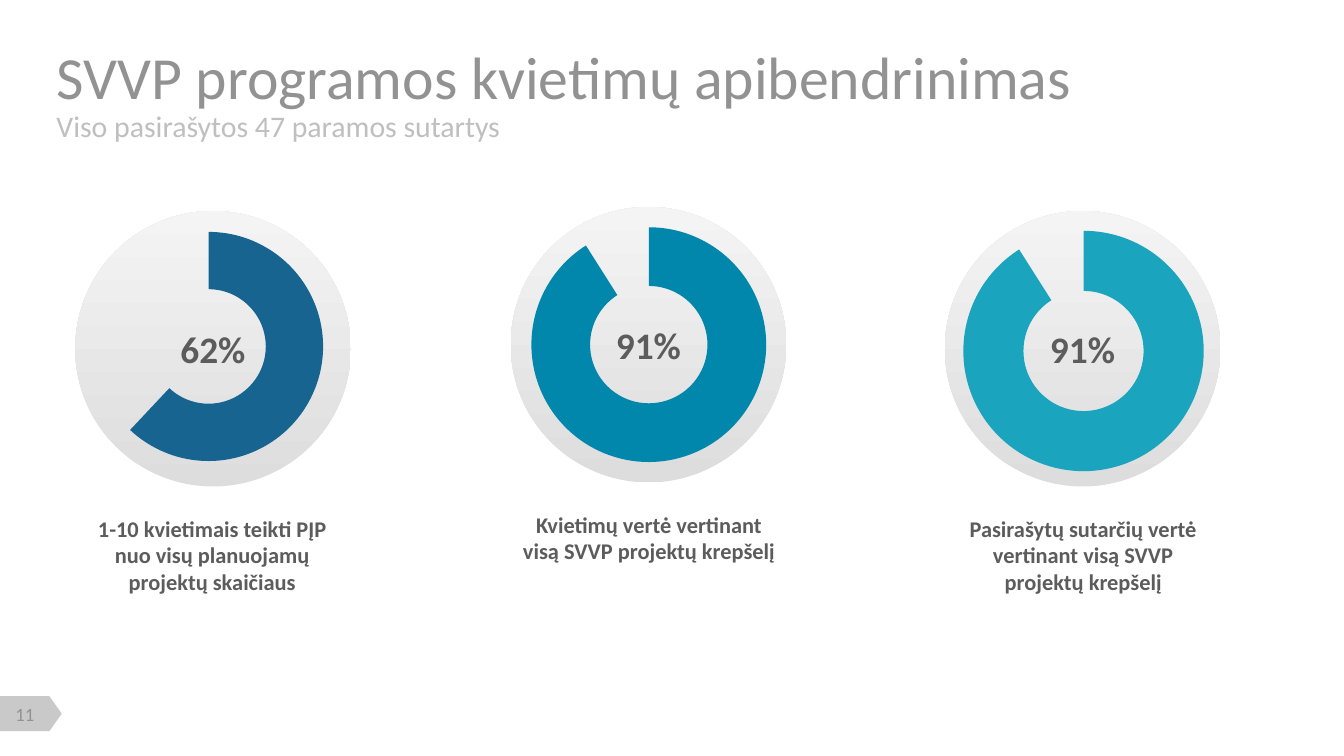
from lxml import etree
from pptx import Presentation
from pptx.chart.data import CategoryChartData
from pptx.dml.color import RGBColor
from pptx.enum.chart import XL_CHART_TYPE
from pptx.enum.shapes import MSO_SHAPE
from pptx.enum.text import MSO_ANCHOR, PP_ALIGN
from pptx.oxml.ns import qn
from pptx.util import Inches, Pt

DOUGHNUT = XL_CHART_TYPE.DOUGHNUT
OVAL = MSO_SHAPE.OVAL
PAGE_TAG = MSO_SHAPE.FLOWCHART_OFFPAGE_CONNECTOR
TOP, MIDDLE = MSO_ANCHOR.TOP, MSO_ANCHOR.MIDDLE
LEFT, CENTER = PP_ALIGN.LEFT, PP_ALIGN.CENTER

TITLE_GRAY = RGBColor(0x92, 0x92, 0x92)
SUBTITLE_GRAY = RGBColor(0xBF, 0xBF, 0xBF)
TEXT_GRAY = RGBColor(0x5C, 0x5C, 0x5C)
CHART_TEXT = RGBColor(0x26, 0x26, 0x26)
TAG_GRAY = RGBColor(0xC9, 0xC9, 0xC9)
DISC_DARK = RGBColor(0xDD, 0xDD, 0xDD)
DISC_LIGHT = RGBColor(0xF4, 0xF4, 0xF4)
NAVY = RGBColor(0x17, 0x64, 0x90)
BLUE = RGBColor(0x01, 0x87, 0xAC)
TEAL = RGBColor(0x1A, 0xA4, 0xBE)

DISC_SIZE = 2.05
CAPTION_WIDTH = 1.9

# percent, colour, disc (left, top), chart box, plot area fractions,
# caption (left, top, height), caption text
GAUGES = [
    (62, NAVY, (0.56, 1.57), (0.56, 1.44, 2.08, 2.36), (0.067, 0.121, 0.82, 0.723),
     (0.63, 3.83, 0.61), "1-10 kvietimais teikti PĮP nuo visų planuojamų projektų skaičiaus"),
    (91, BLUE, (3.8, 1.54), (3.76, 1.4, 2.13, 2.33), (0.091, 0.125, 0.821, 0.75),
     (3.88, 3.8, 0.4), "Kvietimų vertė vertinant visą SVVP projektų krepšelį"),
    (91, TEAL, (7.03, 1.57), (7, 1.54, 2.13, 2.19), (0.078, 0.081, 0.842, 0.817),
     (7.11, 3.83, 0.61), "Pasirašytų sutarčių vertė vertinant visą SVVP projektų krepšelį"),
]


def write_text(shape, text, size, color, bold=False, align=CENTER, anchor=MIDDLE,
               insets=(0, 0, 0, 0)):
    frame = shape.text_frame
    frame.word_wrap = True
    frame.vertical_anchor = anchor
    frame.margin_left, frame.margin_top, frame.margin_right, frame.margin_bottom = (
        Inches(inset) for inset in insets)
    paragraph = frame.paragraphs[0]
    paragraph.alignment = align
    run = paragraph.add_run()
    run.text = text
    run.font.name = "Calibri"
    run.font.size = Pt(size)
    run.font.bold = bold
    run.font.color.rgb = color


def set_plot_layout(chart, fractions):
    """Fix the inner plot area as fractions of the chart box."""
    plot_area = chart._chartSpace.chart.plotArea
    for old_layout in plot_area.findall(qn("c:layout")):
        plot_area.remove(old_layout)
    layout = etree.Element(qn("c:layout"))
    manual = etree.SubElement(layout, qn("c:manualLayout"))
    settings = [("layoutTarget", "inner"), ("xMode", "edge"), ("yMode", "edge")]
    settings += zip("xywh", fractions)
    for name, value in settings:
        etree.SubElement(manual, qn(f"c:{name}")).set("val", str(value))
    plot_area.insert(0, layout)


presentation = Presentation()
presentation.slide_width = Inches(10)
presentation.slide_height = Inches(10) * 9 // 16
slide = presentation.slides.add_slide(presentation.slide_layouts[5])
shapes = slide.shapes

# Page number
page_tag = shapes.add_shape(PAGE_TAG, Inches(0.1), Inches(5.08), Inches(0.26), Inches(0.46))
page_tag.rotation = 270
page_tag.shadow.inherit = False
page_tag.fill.solid()
page_tag.fill.fore_color.rgb = TAG_GRAY
page_tag.line.fill.background()
page_number = shapes.add_textbox(Inches(0.02), Inches(5.23), Inches(0.33), Inches(0.17))
write_text(page_number, "11", 10, TITLE_GRAY)

# Title and subtitle
title = shapes.title
title.left, title.top = Inches(0.42), Inches(0.37)
title.width, title.height = Inches(9.15), Inches(0.39)
write_text(title, "SVVP programos kvietimų apibendrinimas", 32, TITLE_GRAY,
           align=LEFT, insets=(0, 0.05, 0.1, 0.05))
subtitle = shapes.add_textbox(Inches(0.42), Inches(0.84), Inches(9.13), Inches(0.19))
write_text(subtitle, "Viso pasirašytos 47 paramos sutartys", 16, SUBTITLE_GRAY, align=LEFT)

# Gauges: disc with the percentage, doughnut on top, caption below
for percent, color, disc_place, chart_box, plot_box, caption_box, caption_text in GAUGES:
    disc = shapes.add_shape(OVAL, *map(Inches, disc_place), Inches(DISC_SIZE), Inches(DISC_SIZE))
    disc.shadow.inherit = False
    disc.fill.gradient()
    disc.fill.gradient_angle = 90
    for stop, stop_color, position in zip(disc.fill.gradient_stops,
                                          (DISC_DARK, DISC_LIGHT), (0, 1)):
        stop.color.rgb = stop_color
        stop.position = position
    disc.line.fill.background()
    write_text(disc, f"{percent}%", 20, TEXT_GRAY, bold=True)

    chart_data = CategoryChartData()
    chart_data.categories = ["1", "2"]
    chart_data.add_series("Series 1", (percent, 100 - percent))
    chart = shapes.add_chart(DOUGHNUT, *map(Inches, chart_box), chart_data).chart
    chart.has_title = False
    chart.has_legend = False
    chart.font.name = "Calibri"
    chart.font.size = Pt(18)
    chart.font.color.rgb = CHART_TEXT
    set_plot_layout(chart, plot_box)
    plot = chart.plots[0]
    plot.vary_by_categories = False
    plot._element.find(qn("c:holeSize")).set("val", "64")
    filled, rest = (plot.series[0].points[index] for index in range(2))
    filled.format.fill.solid()
    filled.format.fill.fore_color.rgb = color
    rest.format.fill.background()
    for point in (filled, rest):
        point.format.line.fill.background()

    left, top, height = caption_box
    caption = shapes.add_textbox(Inches(left), Inches(top), Inches(CAPTION_WIDTH), Inches(height))
    write_text(caption, caption_text, 12, TEXT_GRAY, bold=True, anchor=TOP)

presentation.save("out.pptx")
